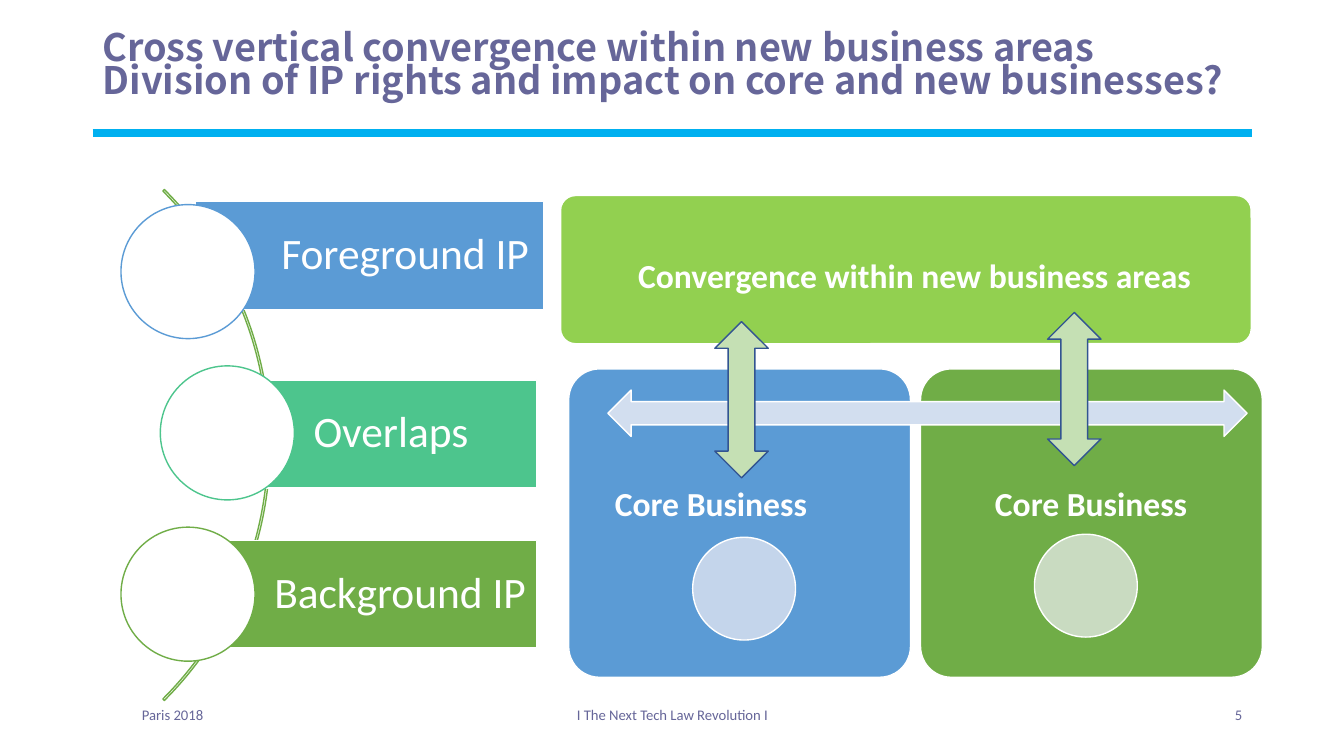
from dataclasses import dataclass

from lxml import etree
from pptx import Presentation
from pptx.dml.color import RGBColor
from pptx.enum import shapes, text
from pptx.oxml import ns
from pptx.util import Inches, Pt

WHITE = RGBColor(0xFF, 0xFF, 0xFF)
SLATE = RGBColor(0x66, 0x66, 0x99)
CYAN = RGBColor(0x00, 0xB0, 0xF0)
BLUE = RGBColor(0x5B, 0x9B, 0xD5)
TEAL = RGBColor(0x4D, 0xC5, 0x8D)
GREEN = RGBColor(0x70, 0xAD, 0x47)
LIME = RGBColor(0x92, 0xD0, 0x50)
PALE_BLUE = RGBColor(0xC4, 0xD5, 0xEB)
PALE_GREEN = RGBColor(0xC9, 0xDB, 0xC1)
ICE = RGBColor(0xD2, 0xDE, 0xEF)
MINT = RGBColor(0xC5, 0xE0, 0xB4)
NAVY = RGBColor(0x32, 0x54, 0x91)

KIND = shapes.MSO_SHAPE
ALIGN = text.PP_ALIGN
ANCHOR = text.MSO_ANCHOR


@dataclass
class IpBand:
    label: str
    left: float
    top: float
    width: float
    circle_left: float
    circle_top: float
    color: RGBColor


@dataclass
class Core:
    left: float
    circle_left: float
    circle_top: float
    label_left: float
    color: RGBColor
    circle_color: RGBColor


@dataclass
class Footer:
    words: str
    left: float
    width: float
    align: ALIGN


BANDS = [
    IpBand("Foreground IP", 1.94, 2.0, 3.45, 1.2, 2.03, BLUE),
    IpBand("Overlaps", 2.26, 3.77, 3.06, 1.59, 3.63, TEAL),
    IpBand("Background IP", 1.87, 5.36, 3.45, 1.2, 5.23, GREEN),
]
CORES = [
    Core(5.64, 6.87, 5.33, 6.0, BLUE, PALE_BLUE),
    Core(9.13, 10.26, 5.3, 9.77, GREEN, PALE_GREEN),
]
FOOTERS = [
    Footer("Paris 2018", 1.31, 2.6, ALIGN.LEFT),
    Footer("I The Next Tech Law Revolution I", 4.42, 4.5, ALIGN.CENTER),
    Footer("5", 9.42, 3.0, ALIGN.RIGHT),
]


def write(shape, words: str, *, size: float, color: RGBColor = WHITE,
          font: str = "Calibri", bold: bool = False, align: ALIGN = ALIGN.LEFT,
          anchor: ANCHOR = ANCHOR.TOP, spacing: float = 1.0,
          insets: tuple = (0.1, 0.05, 0.1, 0.05)) -> None:
    """Fill a shape with one formatted paragraph."""
    frame = shape.text_frame
    frame.word_wrap = True
    frame.vertical_anchor = anchor
    (frame.margin_left, frame.margin_top,
     frame.margin_right, frame.margin_bottom) = map(Inches, insets)
    para = frame.paragraphs[0]
    para.alignment = align
    para.line_spacing = spacing
    for number, line in enumerate(words.split("\n")):
        if number:
            para.add_line_break()
        span = para.add_run()
        span.text = line
        span.font.name = font
        span.font.size = Pt(size)
        span.font.bold = bold
        span.font.color.rgb = color


def add_text(page, words: str, left: float, top: float, width: float,
             height: float, **style) -> None:
    box = page.shapes.add_textbox(*map(Inches, (left, top, width, height)))
    write(box, words, **style)


def add_figure(page, kind: KIND, left: float, top: float, width: float,
               height: float, fill: RGBColor, line: RGBColor = WHITE,
               adjustments: tuple = ()):
    figure = page.shapes.add_shape(kind, *map(Inches, (left, top, width, height)))
    figure.shadow.inherit = False
    figure.fill.solid()
    figure.fill.fore_color.rgb = fill
    figure.line.color.rgb = line
    figure.line.width = Pt(1)
    for index, value in enumerate(adjustments):
        figure.adjustments[index] = value
    return figure


def add_heading(page) -> None:
    rule = page.shapes.add_connector(
        shapes.MSO_CONNECTOR.STRAIGHT, *map(Inches, (0.92, 1.32, 12.42, 1.32)))
    rule.line.color.rgb = CYAN
    rule.line.width = Pt(6)
    etree.SubElement(rule._element.spPr, ns.qn("a:effectLst"))
    add_text(page, "Cross vertical convergence within new business areas\n"
             "Division of IP rights and impact on core and new businesses?",
             0.92, 0.26, 11.5, 1.08, size=27, color=SLATE, bold=True,
             font="Noto Sans CJK KR", spacing=0.74, insets=(0.1, 0.08, 0.1, 0.05))


def add_band(page, band: IpBand) -> None:
    bar = add_figure(page, KIND.RECTANGLE, band.left, band.top, band.width, 1.07, band.color)
    write(bar, band.label, size=31, anchor=ANCHOR.MIDDLE, spacing=0.9,
          insets=(0.85, 0.09, 0.09, 0.09))
    add_figure(page, KIND.OVAL, band.circle_left, band.circle_top, 1.33, 1.33,
               WHITE, band.color)


def add_core(page, core: Core) -> None:
    add_figure(page, KIND.ROUNDED_RECTANGLE, core.left, 3.66, 3.39, 3.06,
               core.color, adjustments=(0.1,))
    add_figure(page, KIND.OVAL, core.circle_left, core.circle_top, 1.02, 1.02,
               core.circle_color)
    add_text(page, "Core Business", core.label_left, 4.74, 2.7, 0.5, size=24, bold=True)


def main() -> None:
    deck = Presentation()
    deck.slide_width, deck.slide_height = Inches(13.33), Inches(7.5)
    page = deck.slides.add_slide(deck.slide_layouts[6])

    # Heading and footer
    add_heading(page)
    for footer in FOOTERS:
        add_text(page, footer.words, footer.left, 6.95, footer.width, 0.4,
                 size=10.5, color=SLATE, align=footer.align)

    # Core businesses and the arrow that joins them
    for core in CORES:
        add_core(page, core)
    add_figure(page, KIND.LEFT_RIGHT_ARROW, 6.03, 3.87, 6.34, 0.46, ICE)

    # Kinds of IP along an arc
    add_figure(page, KIND.BLOCK_ARC, -4.49, 0.83, 7.17, 7.17, WHITE, GREEN,
               adjustments=(189, 27, 0.003))
    for band in BANDS:
        add_band(page, band)

    # Convergence area and its links to the core businesses
    add_figure(page, KIND.ROUNDED_RECTANGLE, 5.56, 1.94, 6.85, 1.47, LIME,
               adjustments=(0.1,))
    add_text(page, "Convergence within new business areas", 6.23, 2.48, 5.89, 0.5,
             size=24, bold=True)
    for left, top, height in ((7.09, 3.19, 1.55), (10.39, 3.1, 1.52)):
        add_figure(page, KIND.UP_DOWN_ARROW, left, top, 0.53, height, MINT, NAVY)

    deck.save("out.pptx")


if __name__ == "__main__":
    main()
